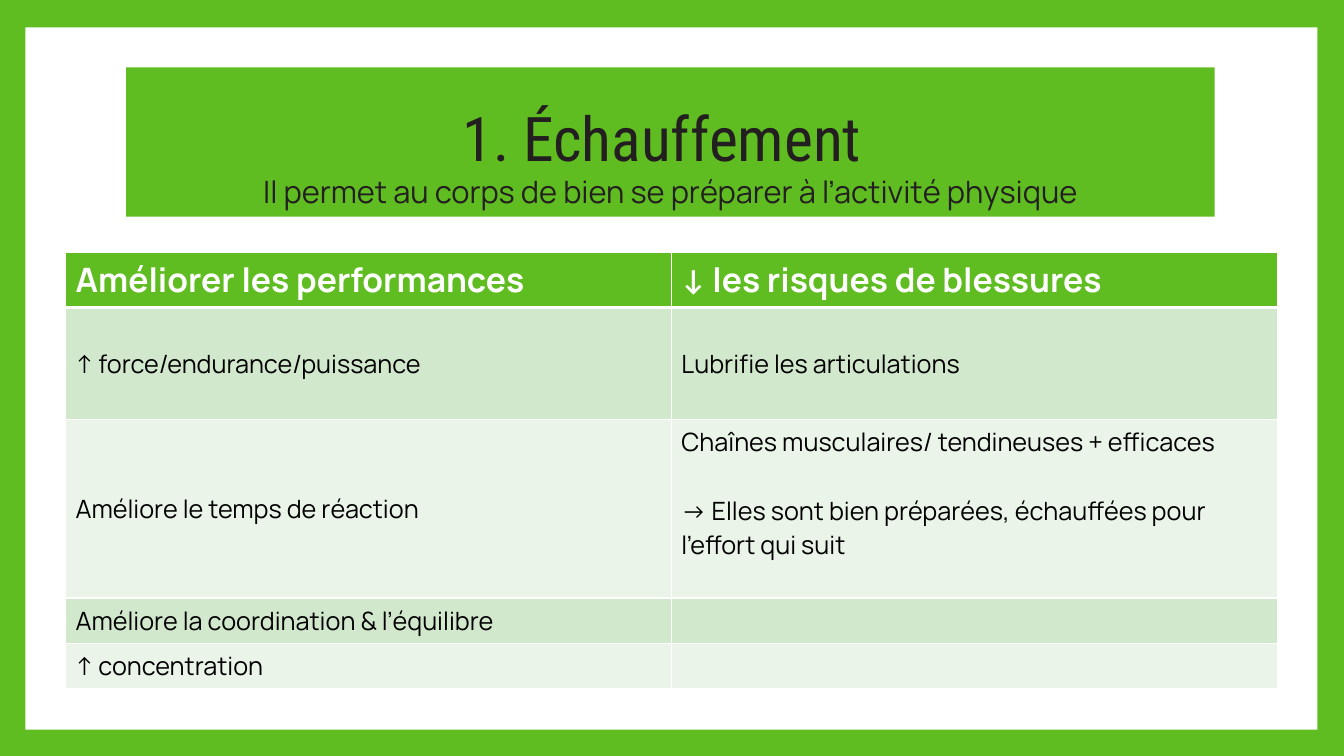
import pptx
import pptx.util
import pptx.dml.color
import pptx.enum.shapes
import pptx.enum.text
import pptx.oxml
import pptx.oxml.ns

Cm, Pt = pptx.util.Cm, pptx.util.Pt
ALIGN = pptx.enum.text.PP_ALIGN
MIDDLE = pptx.enum.text.MSO_ANCHOR.MIDDLE
RECT = pptx.enum.shapes.MSO_SHAPE.RECTANGLE

HUES = {"green": "60BD21", "white": "FFFFFF", "ink": "231F20",
        "black": "000000", "dark": "D2E8CD", "light": "EAF4E8"}

TITLE = {"name": "Roboto Condensed", "size": Pt(44)}
LEAD = {"name": "Manrope", "size": Pt(22)}
HEAD = {"name": "Manrope", "size": Pt(24), "bold": True}
BODY = {"name": "Manrope", "size": Pt(18), "bold": False}

ROWS = [
    (1.4, "Améliorer les performances", "↓ les risques de blessures"),
    (2.82, "↑ force/endurance/puissance", "Lubrifie les articulations"),
    (4.5, "Améliore le temps de réaction",
     "Chaînes musculaires/ tendineuses + efficaces\n"
     "→ Elles sont bien préparées, échauffées pour l’effort qui suit"),
    (1.14, "Améliore la coordination & l’équilibre", ""),
    (1.14, "↑ concentration", ""),
]


def color(name):
    return pptx.dml.color.RGBColor.from_string(HUES[name])


def paint(fill, name):
    fill.solid()
    fill.fore_color.rgb = color(name)


def style(part, look, hue, **form):
    """Format a paragraph and its runs."""
    for key, val in form.items():
        setattr(part, key, val)
    for run in part.runs:
        for key, val in look.items():
            setattr(run.font, key, val)
        run.font.color.rgb = color(hue)


def add_rect(slide, box, hue):
    rect = slide.shapes.add_shape(RECT, *map(Cm, box))
    rect.shadow.inherit = False
    paint(rect.fill, hue)
    rect.line.fill.background()
    return rect


def add_frame(slide, box):
    """Green border around a white panel."""
    paint(slide.background.fill, "green")
    add_rect(slide, box, "white")


def add_banner(slide, box):
    """Title block with the lead line at its foot."""
    left, top, width, height = box
    frame = add_rect(slide, box, "green").text_frame
    frame.text = "1. Échauffement"
    form = {"word_wrap": True, "vertical_anchor": MIDDLE, "margin_right": Cm(0.65)}
    for key, val in form.items():
        setattr(frame, key, val)
    style(frame.paragraphs[0], TITLE, "ink", alignment=ALIGN.CENTER, line_spacing=0.9)

    lead = slide.shapes.add_textbox(Cm(left), Cm(top + 2.64), Cm(width), Cm(1.65))
    lead.text_frame.word_wrap = True
    lead.text_frame.text = "Il permet au corps de bien se préparer à l’activité physique"
    style(lead.text_frame.paragraphs[0], LEAD, "ink",
          alignment=ALIGN.CENTER, line_spacing=0.9)


def add_edges(cell, row):
    """White rules, thicker under the header."""
    props = cell._tc.get_or_add_tcPr()
    wide = {"T": row == 1, "B": row == 0}
    for spot, side in enumerate("LRTB"):
        size = Pt(3 if wide.get(side) else 1)
        props.insert(spot, pptx.oxml.parse_xml(
            f'<a:ln{side} {pptx.oxml.ns.nsdecls("a")} w="{size}"><a:solidFill>'
            f'<a:srgbClr val="{HUES["white"]}"/></a:solidFill></a:ln{side}>'))


def add_grid(slide, box):
    """Table of benefits in two equal columns."""
    grid = slide.shapes.add_table(len(ROWS), 2, *map(Cm, box)).table
    grid.horz_banding = False
    for col in grid.columns:
        col.width = Cm(box[2] / 2)
    for row, (high, *texts) in enumerate(ROWS):
        grid.rows[row].height = Cm(high)
        fill = "green" if row == 0 else ("light", "dark")[row % 2]
        look, hue = (HEAD, "white") if row == 0 else (BODY, "black")
        for col, text in enumerate(texts):
            cell = grid.cell(row, col)
            cell.text = text
            paint(cell.fill, fill)
            add_edges(cell, row)
            parts = cell.text_frame.paragraphs
            if len(parts) == 1:
                cell.vertical_anchor = MIDDLE
            for spot, part in enumerate(parts):
                style(part, look, hue, space_before=Pt(24.6 if spot else 0))


def main():
    deck = pptx.Presentation()
    deck.slide_width, deck.slide_height = Cm(33.87), Cm(19.05)
    slide = deck.slides.add_slide(deck.slide_layouts[6])
    add_frame(slide, (0.64, 0.69, 32.56, 17.7))
    add_banner(slide, (3.18, 1.7, 27.43, 3.76))
    add_grid(slide, (1.65, 6.35, 30.54, 11))
    deck.save("out.pptx")


if __name__ == "__main__":
    main()
